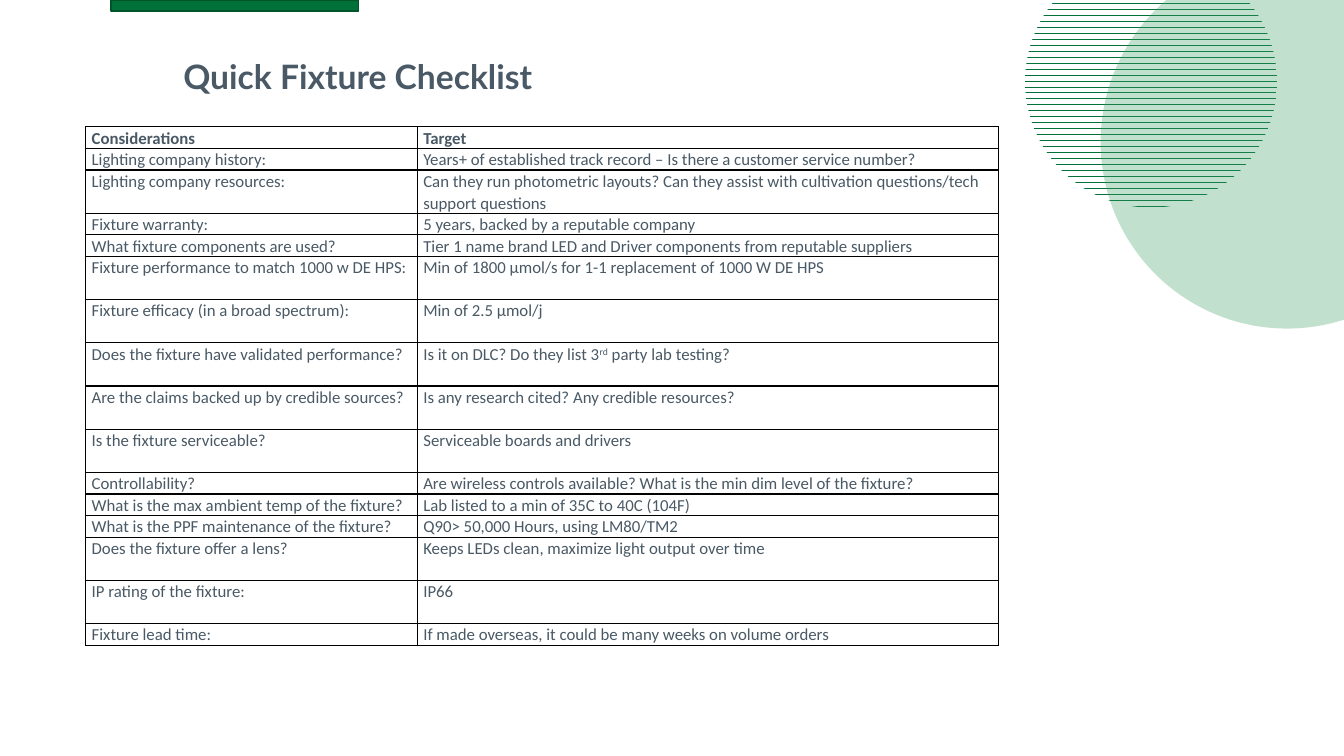
from dataclasses import dataclass

from lxml.etree import SubElement
from pptx import Presentation
from pptx.dml.color import RGBColor
from pptx.enum.dml import MSO_PATTERN
from pptx.enum.shapes import MSO_SHAPE
from pptx.enum.text import PP_ALIGN
from pptx.oxml.ns import qn
from pptx.util import Pt

GREEN = RGBColor(0x00, 0x72, 0x39)
DARK_GREEN = RGBColor(0x00, 0x54, 0x2A)
SOFT_GREEN = RGBColor(0x40, 0x9F, 0x68)
SLATE = RGBColor(0x49, 0x59, 0x65)
WHITE = RGBColor(0xFF, 0xFF, 0xFF)
BLACK = RGBColor(0x00, 0x00, 0x00)

SINGLE_ROW = 15.45
DOUBLE_ROW = 30.85
COLUMN_WIDTHS = (236.9, 415.4)


@dataclass
class Box:
    left: float
    top: float
    width: float
    height: float

    def lengths(self) -> tuple:
        return Pt(self.left), Pt(self.top), Pt(self.width), Pt(self.height)


@dataclass
class Check:
    consideration: str
    target: str
    tall: bool = False
    superscript: str = ""
    ending: str = ""
    bold: bool = False


CHECKS = [
    Check("Considerations", "Target", bold=True),
    Check("Lighting company history:",
          "Years+ of established track record – Is there a customer service number?"),
    Check("Lighting company resources:",
          "Can they run photometric layouts? Can they assist with cultivation "
          "questions/tech support questions", tall=True),
    Check("Fixture warranty:", "5 years, backed by a reputable company"),
    Check("What fixture components are used?",
          "Tier 1 name brand LED and Driver components from reputable suppliers"),
    Check("Fixture performance to match 1000 w DE HPS:",
          "Min of 1800 µmol/s for 1-1 replacement of 1000 W DE HPS", tall=True),
    Check("Fixture efficacy (in a broad spectrum):", "Min of 2.5 µmol/j", tall=True),
    Check("Does the fixture have validated performance?",
          "Is it on DLC? Do they list 3", tall=True,
          superscript="rd", ending=" party lab testing?"),
    Check("Are the claims backed up by credible sources?",
          "Is any research cited? Any credible resources?", tall=True),
    Check("Is the fixture serviceable?", "Serviceable boards and drivers", tall=True),
    Check("Controllability?",
          "Are wireless controls available? What is the min dim level of the fixture?"),
    Check("What is the max ambient temp of the fixture?",
          "Lab listed to a min of 35C to 40C (104F)"),
    Check("What is the PPF maintenance of the fixture?",
          "Q90> 50,000 Hours, using LM80/TM2"),
    Check("Does the fixture offer a lens?",
          "Keeps LEDs clean, maximize light output over time", tall=True),
    Check("IP rating of the fixture:", "IP66", tall=True),
    Check("Fixture lead time:",
          "If made overseas, it could be many weeks on volume orders"),
]


def add_span(para, text: str, font: str, size: float, bold: bool = False,
             raised: bool = False) -> None:
    span = para.add_run()
    span.text = text
    span.font.name = font
    span.font.size = Pt(size)
    span.font.bold = bold
    span.font.color.rgb = SLATE
    if raised:
        span.font._element.set("baseline", "30000")


def add_plain_shape(page, kind: MSO_SHAPE, box: Box):
    shape = page.shapes.add_shape(kind, *box.lengths())
    shape.shadow.inherit = False
    shape.line.fill.background()
    return shape


def add_decoration(page) -> None:
    # Striped circle
    stripes = add_plain_shape(page, MSO_SHAPE.OVAL, Box(732.2, -31.7, 180, 180))
    stripes.fill.patterned()
    stripes.fill.pattern = MSO_PATTERN.DASHED_HORIZONTAL
    stripes.fill.fore_color.rgb = GREEN
    stripes.fill.back_color.rgb = WHITE

    # Translucent circle
    disc = add_plain_shape(page, MSO_SHAPE.OVAL, Box(786.2, -31.7, 266.4, 266.4))
    disc.fill.solid()
    disc.fill.fore_color.rgb = SOFT_GREEN
    color = disc._element.spPr.find(qn("a:solidFill")).find(qn("a:srgbClr"))
    SubElement(color, qn("a:alpha")).set("val", "32000")

    # Top bar
    bar = add_plain_shape(page, MSO_SHAPE.RECTANGLE, Box(79.2, 0, 177.1, 7.9))
    bar.fill.solid()
    bar.fill.fore_color.rgb = GREEN
    bar.line.color.rgb = DARK_GREEN
    bar.line.width = Pt(1)


def add_title(page) -> None:
    box = page.shapes.add_textbox(*Box(84.2, 39.6, 342.7, 33.1).lengths())
    box.text_frame.word_wrap = True
    para = box.text_frame.paragraphs[0]
    para.alignment = PP_ALIGN.CENTER
    para.line_spacing = 0.9
    add_span(para, "Quick Fixture Checklist", "Lato", 24, bold=True)


def add_borders(cell) -> None:
    properties = cell._tc.get_or_add_tcPr()
    for position, side in enumerate(("a:lnL", "a:lnR", "a:lnT", "a:lnB")):
        line = SubElement(properties, qn(side))
        line.set("w", str(Pt(1)))
        fill = SubElement(line, qn("a:solidFill"))
        SubElement(fill, qn("a:srgbClr")).set("val", str(BLACK))
        properties.insert(position, line)


def format_cell(cell):
    cell.margin_left = cell.margin_right = Pt(4.3)
    cell.margin_top = cell.margin_bottom = Pt(0)
    cell.fill.background()
    add_borders(cell)
    para = cell.text_frame.paragraphs[0]
    para.line_spacing = 1.07
    return para


def add_checklist(page) -> None:
    heights = [DOUBLE_ROW if check.tall else SINGLE_ROW for check in CHECKS]
    box = Box(61.2, 90.5, sum(COLUMN_WIDTHS), sum(heights))
    table = page.shapes.add_table(len(CHECKS), 2, *box.lengths()).table
    table.first_row = False
    table.horz_banding = False
    for column, width in zip(table.columns, COLUMN_WIDTHS):
        column.width = Pt(width)
    for index, (check, height) in enumerate(zip(CHECKS, heights)):
        table.rows[index].height = Pt(height)
        question = format_cell(table.cell(index, 0))
        answer = format_cell(table.cell(index, 1))
        add_span(question, check.consideration, "Calibri", 12, check.bold)
        add_span(answer, check.target, "Calibri", 12, check.bold)
        if check.superscript:
            add_span(answer, check.superscript, "Calibri", 12, raised=True)
            add_span(answer, check.ending, "Calibri", 12)


def main() -> None:
    deck = Presentation()
    deck.slide_width = Pt(960)
    deck.slide_height = Pt(540)
    page = deck.slides.add_slide(deck.slide_layouts[6])
    add_decoration(page)
    add_title(page)
    add_checklist(page)
    deck.save("out.pptx")


if __name__ == "__main__":
    main()
